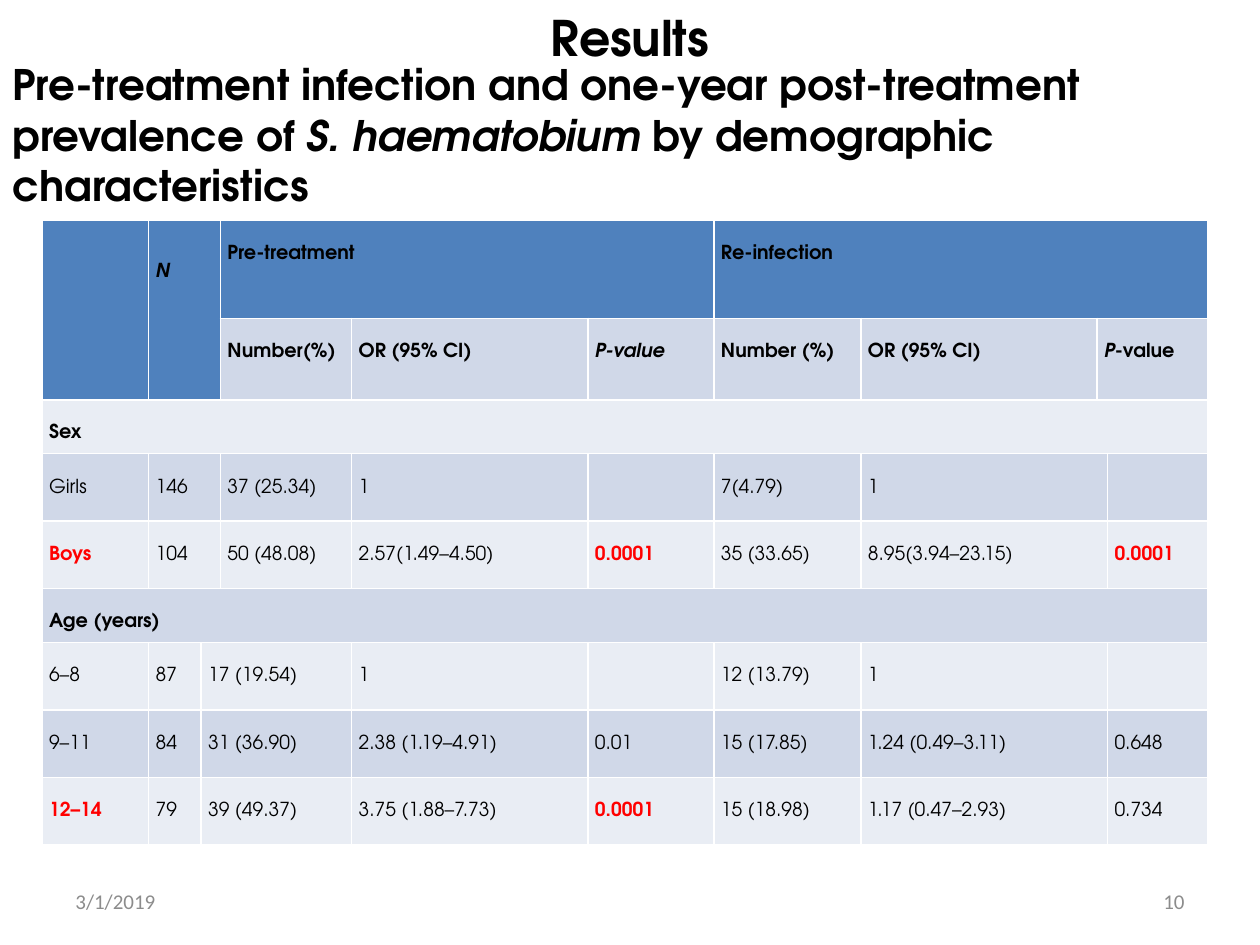
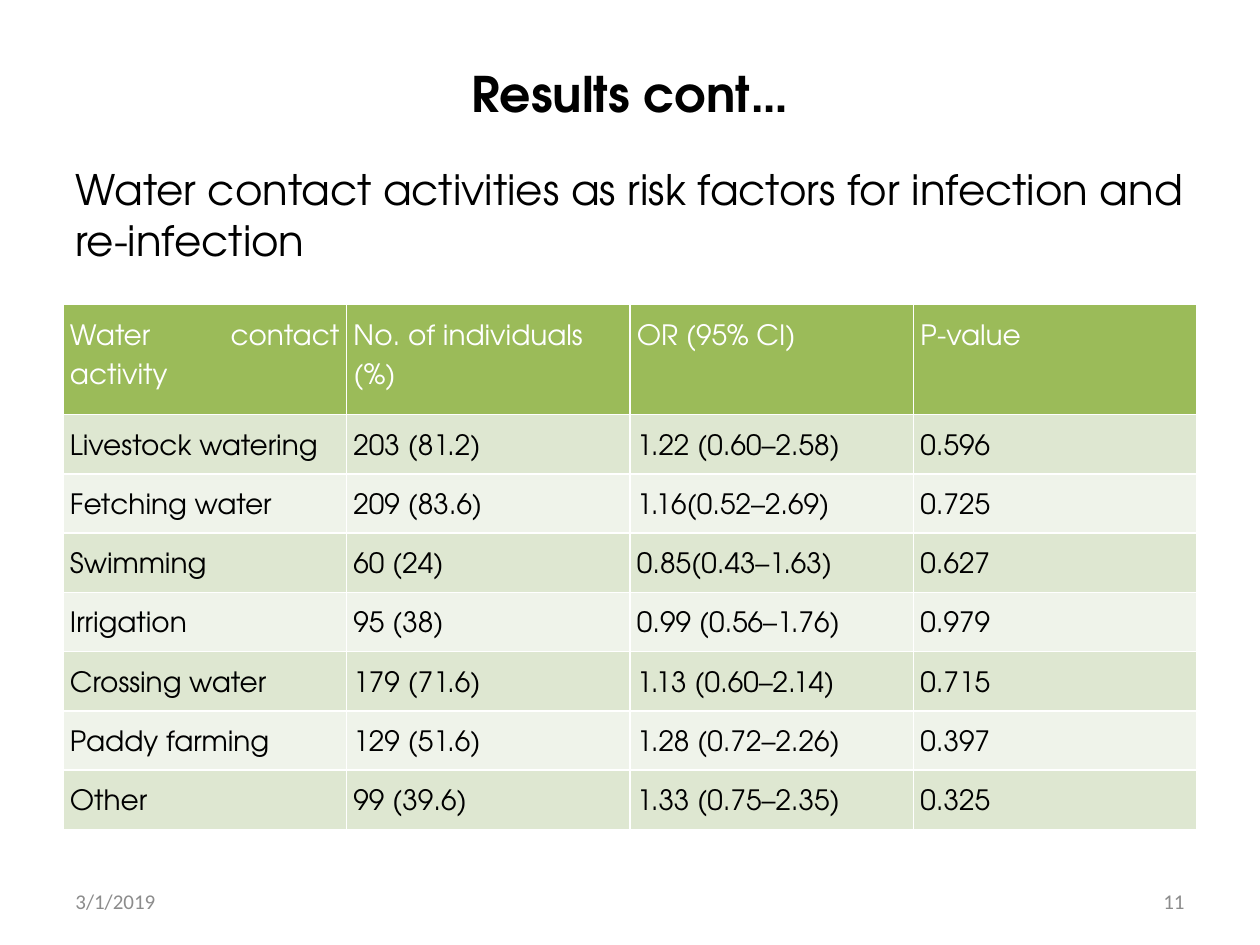
from lxml import etree
from pptx import Presentation
from pptx.dml.color import RGBColor
from pptx.enum.text import MSO_ANCHOR, PP_ALIGN
from pptx.oxml.ns import qn
from pptx.util import Pt

LEFT, CENTER, RIGHT, JUSTIFY = PP_ALIGN.LEFT, PP_ALIGN.CENTER, PP_ALIGN.RIGHT, PP_ALIGN.JUSTIFY
TOP, MIDDLE = MSO_ANCHOR.TOP, MSO_ANCHOR.MIDDLE
COLORS = {
    "text": "000000", "highlight": "FF0000", "footer": "8C8C8C", "white": "FFFFFF",
    "blue": "4F81BD", "blue dark band": "D0D8E8", "blue light band": "E9EDF4",
    "green": "9BBB59", "green dark band": "DEE7D1", "green light band": "EFF3EA",
}
HEADING_FONT = "TeX Gyre Adventor"
FOOTER_FONT = "Calibri"
CELL_MARGIN = 4
JOIN_LEFT, JOIN_UP = "<", "^"


def write(text_frame, text, size, color="text", font=HEADING_FONT, bold=False,
          align=LEFT, anchor=TOP, line_spacing=None):
    """Fill a text frame with one paragraph; *asterisks* enclose italics."""
    text_frame.word_wrap = True
    text_frame.vertical_anchor = anchor
    paragraph = text_frame.paragraphs[0]
    paragraph.alignment = align
    paragraph.line_spacing = line_spacing
    for index, part in enumerate(text.split("*")):
        if part:
            run = paragraph.add_run()
            run.text = part
            run.font.name = font
            run.font.size = Pt(size)
            run.font.bold = bold
            run.font.italic = index % 2 == 1
            run.font.color.rgb = RGBColor.from_string(COLORS[color])


def add_banded_table(slide, left, top, widths, heights, rows, palette):
    """Add a table with a coloured first row, bands and white rules; join the marked cells."""
    frame = slide.shapes.add_table(len(rows), len(widths), Pt(left), Pt(top),
                                   Pt(sum(widths)), Pt(sum(heights)))
    table = frame.table
    table.first_row = table.horz_banding = False
    for column, width in zip(table.columns, widths):
        column.width = Pt(width)
    for row, height in zip(table.rows, heights):
        row.height = Pt(height)

    for r, texts in enumerate(rows):
        band = palette if r == 0 else f"{palette} {'dark' if r % 2 else 'light'} band"
        for c, text in enumerate(texts):
            cell = table.cell(r, c)
            cell.margin_left = cell.margin_right = cell.margin_top = Pt(CELL_MARGIN)
            cell.margin_bottom = 0
            properties = cell._tc.get_or_add_tcPr()
            for side in ("lnL", "lnR", "lnT", "lnB"):
                line = etree.SubElement(properties, qn(f"a:{side}"), w=str(Pt(1)))
                fill = etree.SubElement(line, qn("a:solidFill"))
                etree.SubElement(fill, qn("a:srgbClr"), val=COLORS["white"])
            cell.fill.solid()
            cell.fill.fore_color.rgb = RGBColor.from_string(COLORS[band])

            if text in (JOIN_LEFT, JOIN_UP):
                continue
            last_row, last_column = r, c
            while last_column + 1 < len(texts) and texts[last_column + 1] == JOIN_LEFT:
                last_column += 1
            while last_row + 1 < len(rows) and rows[last_row + 1][c] == JOIN_UP:
                last_row += 1
            if (last_row, last_column) != (r, c):
                cell.merge(table.cell(last_row, last_column))
    return table


presentation = Presentation()
presentation.slide_width, presentation.slide_height = Pt(720), Pt(540)

# Title, subtitle and footer: left, top, width, height, text, format
title_format = {"size": 28, "bold": True, "align": CENTER, "anchor": MIDDLE}
footer_format = {"size": 12, "color": "footer", "font": FOOTER_FONT, "anchor": MIDDLE}
slide_texts = [
    [(36, 0, 648, 42, "Results", title_format),
     (0, 30, 720, 94.5, "Pre-treatment infection and one-year post-treatment prevalence of "
      "*S. haematobium* by demographic characteristics", {"size": 24, "bold": True})],
    [(36, 21.6, 648, 62.6, "Results cont…", title_format),
     (36, 90, 648, 65.5, "Water contact activities as risk factors for infection and re-infection",
      {"size": 24})],
]
slides = []
for number, texts in enumerate(slide_texts, start=10):
    slide = presentation.slides.add_slide(presentation.slide_layouts[6])
    slides.append(slide)
    footers = [(36, 500.5, 168, 28.75, "3/1/2019", footer_format),
               (516, 500.5, 168, 28.75, str(number), {**footer_format, "align": RIGHT})]
    for left, top, width, height, text, text_format in texts + footers:
        box = slide.shapes.add_textbox(Pt(left), Pt(top), Pt(width), Pt(height))
        write(box.text_frame, text, **text_format)

# Slide 1: prevalence by sex and age
prevalence_rows = [
    ["", "*N*", JOIN_LEFT, "Pre-treatment", JOIN_LEFT, JOIN_LEFT,
     "Re-infection", JOIN_LEFT, JOIN_LEFT, JOIN_LEFT],
    [JOIN_UP, JOIN_UP, JOIN_UP, "Number(%)", "OR (95% CI)", "*P-value*",
     "Number (%)", "OR (95% CI)", "*P*-value", JOIN_LEFT],
    ["Sex"] + [JOIN_LEFT] * 9,
    ["Girls", "146", JOIN_LEFT, "37 (25.34)", "1", "", "7(4.79)", "1", JOIN_LEFT, ""],
    ["Boys", "104", JOIN_LEFT, "50 (48.08)", "2.57(1.49–4.50)", "0.0001",
     "35 (33.65)", "8.95(3.94–23.15)", JOIN_LEFT, "0.0001"],
    ["Age (years)"] + [JOIN_LEFT] * 9,
    ["6–8", "87", "17 (19.54)", JOIN_LEFT, "1", "", "12 (13.79)", "1", JOIN_LEFT, ""],
    ["9–11", "84", "31 (36.90)", JOIN_LEFT, "2.38 (1.19–4.91)", "0.01",
     "15 (17.85)", "1.24 (0.49–3.11)", JOIN_LEFT, "0.648"],
    ["12–14", "79", "39 (49.37)", JOIN_LEFT, "3.75 (1.88–7.73)", "0.0001",
     "15 (18.98)", "1.17 (0.47–2.93)", JOIN_LEFT, "0.734"],
]
group_names = ("Sex", "Age (years)")
highlights = ("Boys", "12–14", "0.0001")
prevalence_table = add_banded_table(
    slides[0], 24, 126, [61, 30, 11, 75, 135, 72, 84, 135, 6, 57.5],
    [56, 46.5] + [30.8, 38.6, 38.6] + [30.8, 38.6, 38.6, 38.6], prevalence_rows, "blue")
for r, texts in enumerate(prevalence_rows):
    for c, text in enumerate(texts):
        if text not in ("", JOIN_LEFT, JOIN_UP):
            write(prevalence_table.cell(r, c).text_frame, text, size=11, line_spacing=2,
                  color="highlight" if text in highlights else "text",
                  bold=r < 2 or text in group_names + highlights,
                  align=JUSTIFY if r < 2 else LEFT)
prevalence_table.cell(0, 1).margin_top = Pt(CELL_MARGIN + 10.3)

# Slide 2: water contact activities
activity_rows = [
    ["Water contact activity", "No. of individuals (%)", "OR (95% CI)", "P-value"],
    ["Livestock watering", "203 (81.2)", "1.22 (0.60–2.58)", "0.596"],
    ["Fetching water", "209 (83.6)", "1.16(0.52–2.69)", "0.725"],
    ["Swimming", "60 (24)", "0.85(0.43–1.63)", "0.627"],
    ["Irrigation", "95 (38)", "0.99 (0.56–1.76)", "0.979"],
    ["Crossing water", "179 (71.6)", "1.13 (0.60–2.14)", "0.715"],
    ["Paddy farming", "129 (51.6)", "1.28 (0.72–2.26)", "0.397"],
    ["Other", "99 (39.6)", "1.33 (0.75–2.35)", "0.325"],
]
activity_table = add_banded_table(slides[1], 36, 174, [162] * 4, [63] + [33.85] * 7,
                                  activity_rows, "green")
for r, texts in enumerate(activity_rows):
    for c, text in enumerate(texts):
        write(activity_table.cell(r, c).text_frame, text, size=16, line_spacing=1.5,
              color="white" if r == 0 else "text",
              align=LEFT if (r, c) == (0, 1) else JUSTIFY)

presentation.save("out.pptx")
